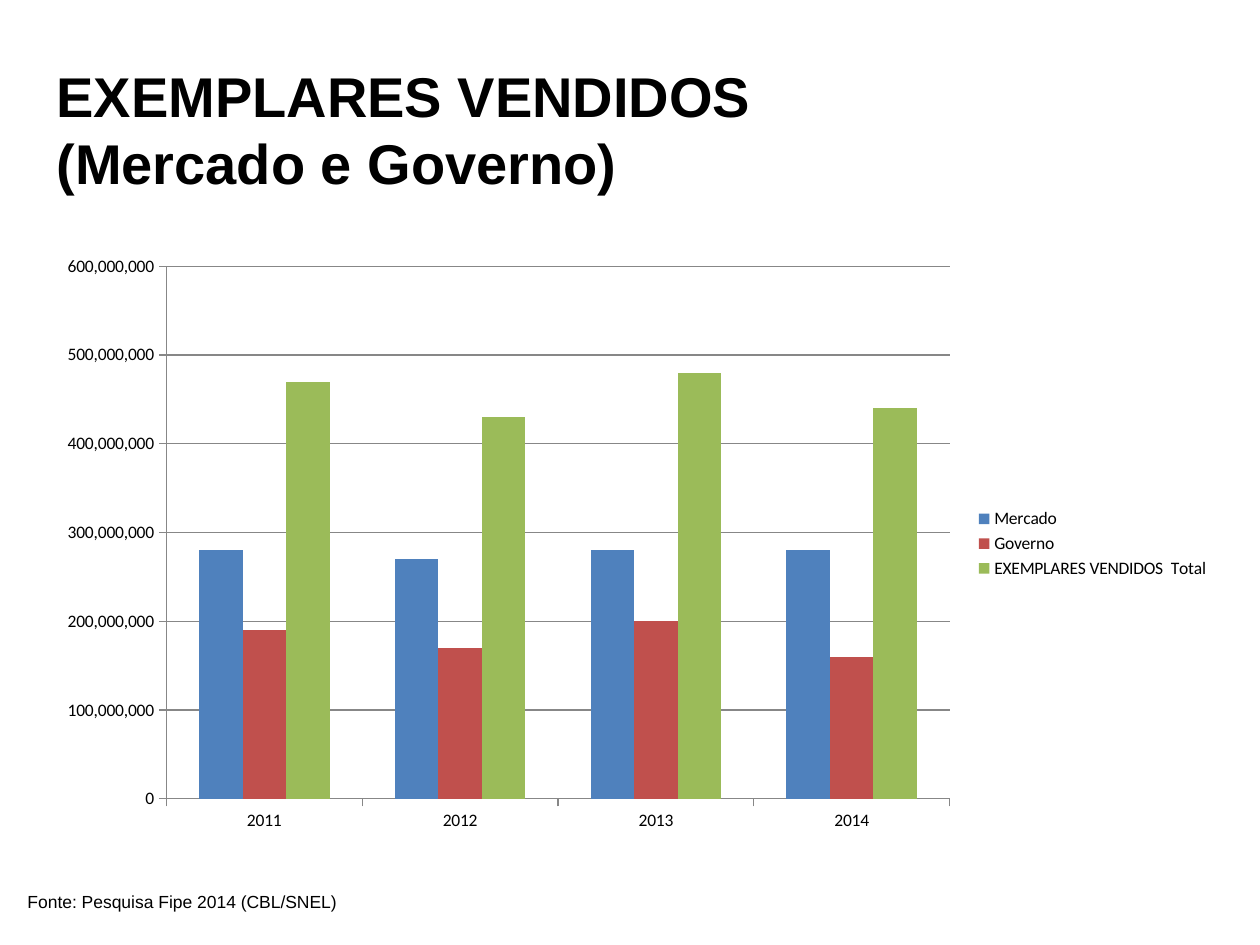
from dataclasses import dataclass

from pptx import Presentation
from pptx import util as u
from pptx.chart import data
from pptx.dml import color
from pptx.enum import chart as ch
from pptx.enum import text


@dataclass(frozen=True)
class Theme:
    ink: str = "000000"
    grid: str = "878787"
    font: str = "Arial"
    plot: str = "Calibri"
    head: int = 32
    small: int = 10


@dataclass(frozen=True)
class Box:
    left: float
    top: float
    width: float
    height: float

    def place(self) -> tuple:
        return tuple(map(u.Inches, (self.left, self.top, self.width, self.height)))


@dataclass(frozen=True)
class Label:
    box: Box
    lines: tuple[str, ...]
    size: int
    bold: bool = False
    wrap: bool = True


@dataclass(frozen=True)
class Series:
    name: str
    tens: tuple[int, ...]
    fill: str


THEME = Theme()
YEARS = ("2011", "2012", "2013", "2014")
UNIT = 10_000_000
SALES = (
    Series("Mercado", (28, 27, 28, 28), "4F81BD"),
    Series("Governo", (19, 17, 20, 16), "C0504D"),
    Series("EXEMPLARES VENDIDOS  Total", (47, 43, 48, 44), "9BBB59"),
)
LABELS = (
    Label(Box(0.35, 0.44, 6.54, 1.18),
          ("EXEMPLARES VENDIDOS", "(Mercado e Governo)"), THEME.head, bold=True),
    Label(Box(0.12, 7.02, 2.67, 0.27),
          ("Fonte: Pesquisa Fipe 2014 (CBL/SNEL)",), THEME.small, wrap=False),
)


def style(font, name: str, size: int, bold: bool = False) -> None:
    font.name = name
    font.size = u.Pt(size)
    font.bold = bold
    font.color.rgb = color.RGBColor.from_string(THEME.ink)


def rule(line) -> None:
    line.color.rgb = color.RGBColor.from_string(THEME.grid)
    line.width = u.Pt(0.75)


def write(slide, label: Label) -> None:
    frame = slide.shapes.add_textbox(*label.box.place()).text_frame
    frame.word_wrap = label.wrap
    frame.auto_size = text.MSO_AUTO_SIZE.SHAPE_TO_FIT_TEXT
    frame.text = "\n".join(label.lines)
    for para in frame.paragraphs:
        style(para.font, THEME.font, label.size, label.bold)


def plot(slide, box: Box, sales: tuple[Series, ...]) -> None:
    table = data.CategoryChartData(number_format="#,##0")
    table.categories = YEARS
    for row in sales:
        table.add_series(row.name, [n * UNIT for n in row.tens])
    chart = slide.shapes.add_chart(
        ch.XL_CHART_TYPE.COLUMN_CLUSTERED, *box.place(), table).chart
    style(chart.font, THEME.plot, THEME.small)
    chart.has_title = False
    chart.has_legend = True
    chart.legend.position = ch.XL_LEGEND_POSITION.RIGHT
    chart.legend.include_in_layout = False

    bars = chart.plots[0]
    bars.gap_width = 150
    bars.overlap = 0
    bars.vary_by_categories = False
    for bar, row in zip(bars.series, sales):
        bar.format.fill.solid()
        bar.format.fill.fore_color.rgb = color.RGBColor.from_string(row.fill)
        bar.invert_if_negative = False

    for axis in (chart.category_axis, chart.value_axis):
        axis.major_tick_mark = ch.XL_TICK_MARK.OUTSIDE
        axis.minor_tick_mark = ch.XL_TICK_MARK.NONE
        rule(axis.format.line)
    scale = chart.value_axis
    scale.minimum_scale = 0
    scale.maximum_scale = 60 * UNIT
    scale.major_unit = 10 * UNIT
    scale.has_major_gridlines = True
    rule(scale.major_gridlines.format.line)
    scale.tick_labels.number_format = "#,##0"
    scale.tick_labels.number_format_is_linked = False


def main() -> None:
    deck = Presentation()
    deck.slide_width = u.Inches(10)
    deck.slide_height = u.Inches(7.5)
    slide = deck.slides.add_slide(deck.slide_layouts[6])
    plot(slide, Box(0.35, 1.94, 9.35, 4.75), SALES)
    for label in LABELS:
        write(slide, label)
    deck.save("out.pptx")


if __name__ == "__main__":
    main()
